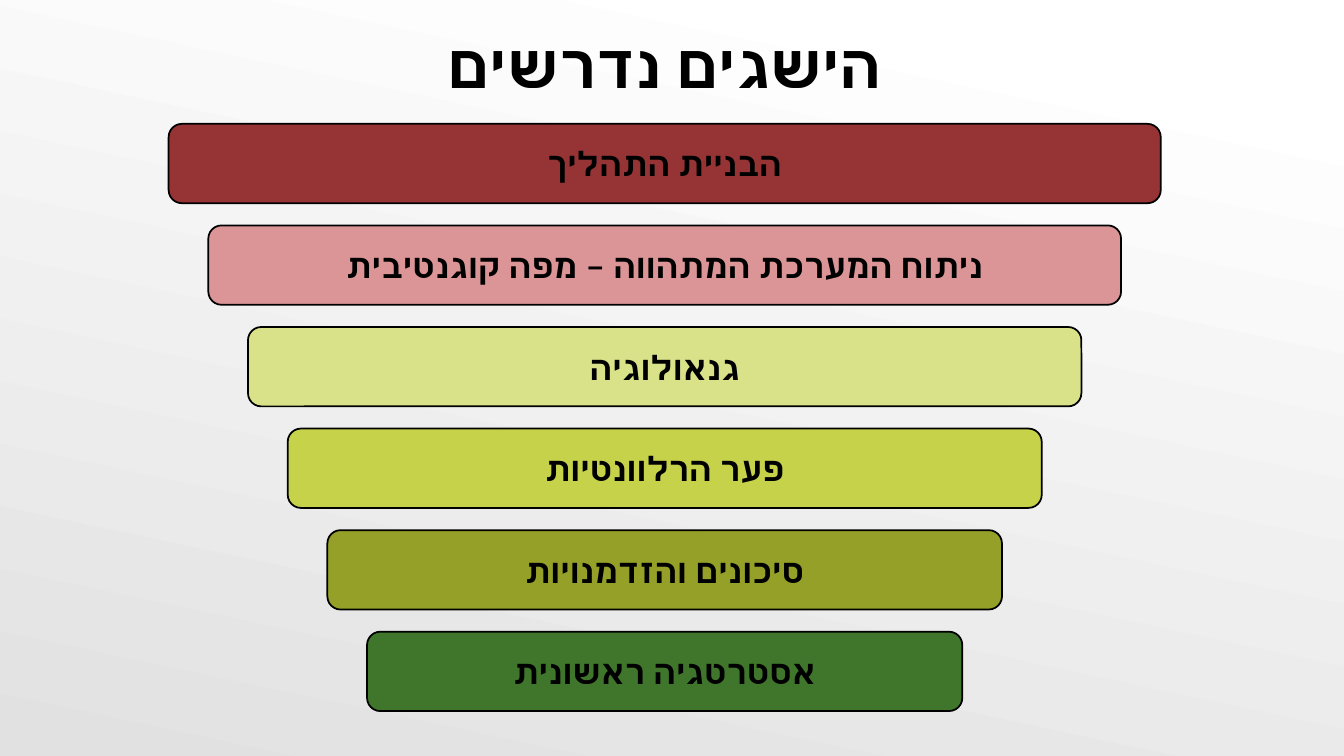
import pptx
import pptx.util
import pptx.dml.color
import pptx.enum.shapes
import pptx.enum.text
import pptx.oxml.ns
from dataclasses import dataclass
from lxml import etree

Pt = pptx.util.Pt
RGB = pptx.dml.color.RGBColor.from_string
ANCHOR = pptx.enum.text.MSO_ANCHOR


@dataclass(frozen=True)
class Theme:
    font: str = "Lato"
    ink: str = "000000"
    back_top: str = "FFFFFF"
    back_bottom: str = "E1E1E1"
    title_size: int = 44
    bar_size: int = 24


theme = Theme()


def write_text(sp, text, size, anchor, side_inset, line_spacing=None):
    """Fill a shape with one centred, bold right-to-left paragraph."""
    tf = sp.text_frame
    tf.word_wrap = True
    tf.vertical_anchor = anchor
    tf.margin_left = tf.margin_right = Pt(side_inset)
    tf.margin_top = tf.margin_bottom = Pt(3.6)
    p = tf.paragraphs[0]
    p.alignment = pptx.enum.text.PP_ALIGN.CENTER
    p.line_spacing = line_spacing
    p._p.get_or_add_pPr().set("rtl", "1")
    r = p.add_run()
    r.text = text
    r.font.size = Pt(size)
    r.font.bold = True
    r.font.color.rgb = RGB(theme.ink)
    r.font.name = theme.font
    # Hebrew takes its typeface from the complex-script font
    cs = etree.SubElement(r.font._element, pptx.oxml.ns.qn("a:cs"))
    cs.set("typeface", theme.font)


prs = pptx.Presentation()
prs.slide_width, prs.slide_height = Pt(960), Pt(540)
s = prs.slides.add_slide(prs.slide_layouts[6])

back = s.background.fill
back.gradient()
back.gradient_angle = 360 - 102
stops = [(0.1, theme.back_top), (1, theme.back_bottom)]
for stop, (position, color) in zip(back.gradient_stops, stops):
    stop.position = position
    stop.color.rgb = RGB(color)

title = s.shapes.add_textbox(Pt(220), Pt(1.5), Pt(510), Pt(74))
write_text(title, "הישגים נדרשים", size=theme.title_size,
           anchor=ANCHOR.BOTTOM, side_inset=7.2, line_spacing=1.5)

# The funnel: centred bars, each narrower than the one above
bars = [
    ("הבניית התהליך", "953335"),
    ("ניתוח המערכת המתהווה – מפה קוגנטיבית", "DB9597"),
    ("גנאולוגיה", "D9E289"),
    ("פער הרלוונטיות", "C5D24A"),
    ("סיכונים והזדמנויות", "94A027"),
    ("אסטרטגיה ראשונית", "3F762B"),
]
center, first_top, first_width = 474.8, 88.5, 708.7
bar_height, pitch, narrowing = 56.7, 72.55, 56.7

for i, (text, color) in enumerate(bars):
    width = first_width - i * narrowing
    sp = s.shapes.add_shape(
        pptx.enum.shapes.MSO_SHAPE.ROUNDED_RECTANGLE,
        Pt(center - width / 2), Pt(first_top + i * pitch),
        Pt(width), Pt(bar_height))
    sp.shadow.inherit = False
    sp.fill.solid()
    sp.fill.fore_color.rgb = RGB(color)
    sp.line.color.rgb = RGB(theme.ink)
    sp.line.width = Pt(1.25)
    write_text(sp, text, size=theme.bar_size,
               anchor=ANCHOR.MIDDLE, side_inset=0)

prs.save("out.pptx")
